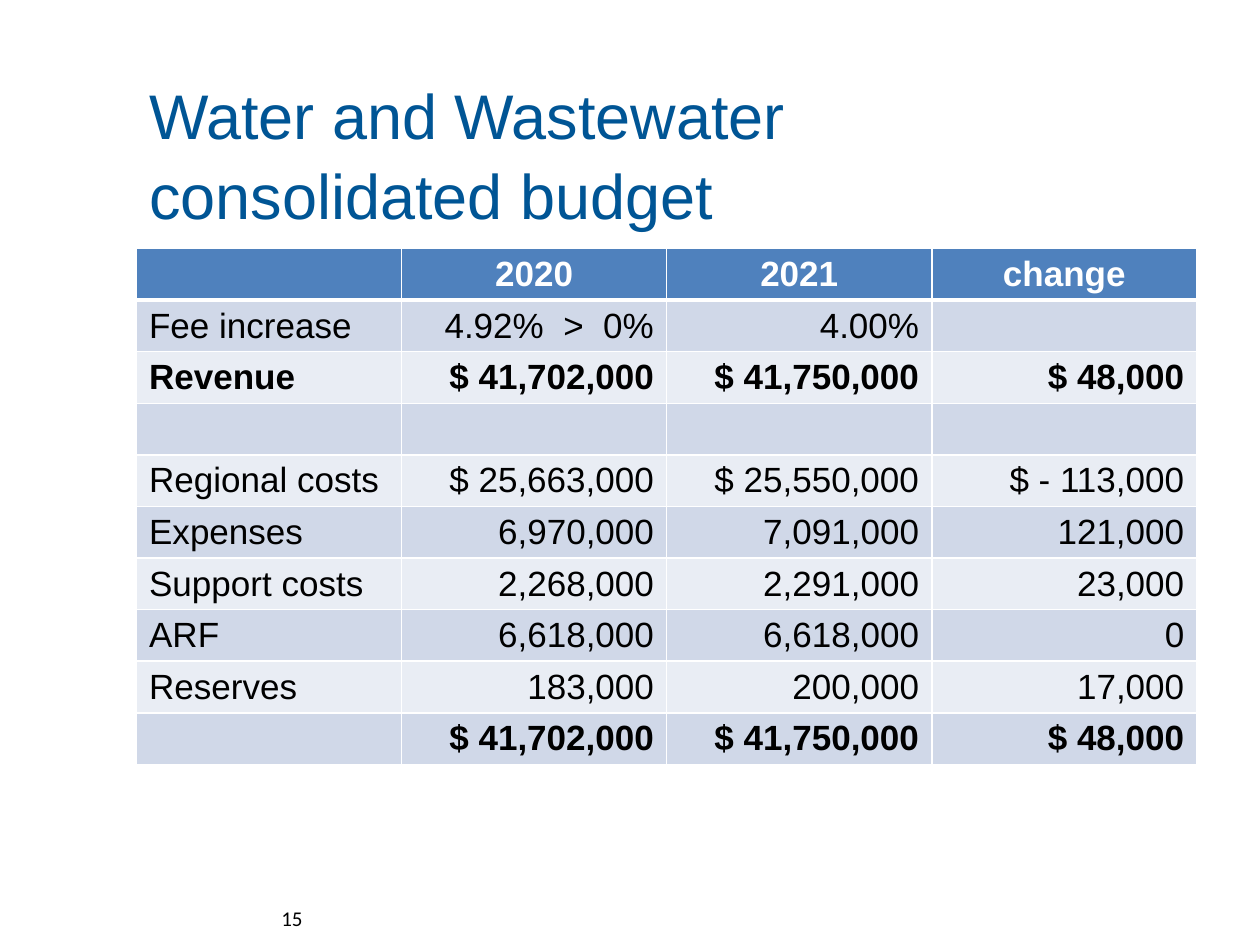
from lxml import etree
from pptx import Presentation
from pptx.dml.color import RGBColor
from pptx.enum.text import MSO_ANCHOR, MSO_AUTO_SIZE, PP_ALIGN
from pptx.oxml.ns import qn
from pptx.util import Pt

LEFT, CENTER, RIGHT = PP_ALIGN.LEFT, PP_ALIGN.CENTER, PP_ALIGN.RIGHT
MIDDLE = MSO_ANCHOR.MIDDLE
NO_AUTOFIT = MSO_AUTO_SIZE.NONE

TITLE = "Water and Wastewater \vconsolidated budget"
HEADINGS = ["", "2020", "2021", "change"]
BUDGET = [
    ["Fee increase", "4.92%  >  0%", "4.00%", ""],
    ["Revenue", "$ 41,702,000", "$ 41,750,000", "$ 48,000"],
    ["", "", "", ""],
    ["Regional costs", "$ 25,663,000", "$ 25,550,000", "$ - 113,000"],
    ["Expenses", "6,970,000", "7,091,000", "121,000"],
    ["Support costs", "2,268,000", "2,291,000", "23,000"],
    ["ARF", "6,618,000", "6,618,000", "0"],
    ["Reserves", "183,000", "200,000", "17,000"],
    ["", "$ 41,702,000", "$ 41,750,000", "$ 48,000"],
]
TOTAL_ROWS = (2, 9)
BANDS = ("E9EDF4", "D0D8E8")
HEADER_FILL = "4F81BD"
WHITE = "FFFFFF"
BLACK = "000000"


def rgb(value):
    return RGBColor.from_string(value)


def apply_format(target, values):
    for name, value in values.items():
        setattr(target, name, value)


def write(frame, text, align, color, **font_values):
    frame.text = text
    paragraph = frame.paragraphs[0]
    paragraph.alignment = align
    for run in paragraph.runs:
        apply_format(run.font, font_values)
        run.font.color.rgb = rgb(color)


def add_borders(cell, bottom_width, top_width):
    properties = cell._tc.get_or_add_tcPr()
    widths = {"lnL": 1, "lnR": 1, "lnT": top_width, "lnB": bottom_width}
    for side, width in widths.items():
        line = etree.SubElement(properties, qn(f"a:{side}"), w=str(Pt(width)))
        fill = etree.SubElement(line, qn("a:solidFill"))
        etree.SubElement(fill, qn("a:srgbClr"), val=WHITE)


def place_title(slide, left, top, width, height):
    title = slide.shapes.title
    apply_format(title, {"left": left, "top": top, "width": width, "height": height})
    frame = title.text_frame
    write(frame, TITLE, LEFT, "005595", size=Pt(36), name="Arial")
    apply_format(frame, {"vertical_anchor": MIDDLE, "word_wrap": True,
                         "auto_size": NO_AUTOFIT})
    frame.paragraphs[0].line_spacing = 1.05


def place_budget(slide, left, top, width, height):
    rows = [HEADINGS] + BUDGET
    budget = slide.shapes.add_table(
        len(rows), len(HEADINGS), left, top, width, height).table
    budget.horz_banding = False
    for row_index, values in enumerate(rows):
        is_header = row_index == 0
        for column_index, text in enumerate(values):
            cell = budget.cell(row_index, column_index)
            add_borders(cell, 3 if is_header else 1, 3 if row_index == 1 else 1)
            cell.fill.solid()
            cell.fill.fore_color.rgb = rgb(
                HEADER_FILL if is_header else BANDS[row_index % 2])
            apply_format(cell, {"vertical_anchor": MIDDLE,
                                "margin_top": 0, "margin_bottom": 0})
            align = CENTER if is_header else RIGHT if column_index else LEFT
            write(cell.text_frame, text, align, WHITE if is_header else BLACK,
                  size=Pt(20), name="Arial",
                  bold=is_header or row_index in TOTAL_ROWS)


def place_page_number(slide, left, top, width, height):
    frame = slide.shapes.add_textbox(left, top, width, height).text_frame
    apply_format(frame, {"vertical_anchor": MIDDLE, "word_wrap": True})
    write(frame, "15", RIGHT, BLACK, size=Pt(12), name="Calibri")


def main():
    deck = Presentation()
    apply_format(deck, {"slide_width": Pt(720), "slide_height": Pt(540)})
    slide = deck.slides.add_slide(deck.slide_layouts[5])
    margin = Pt(78)
    place_title(slide, margin, Pt(42), Pt(648), Pt(90))
    place_budget(slide, margin, Pt(142), Pt(606), Pt(295))
    place_page_number(slide, margin, Pt(510), Pt(102), Pt(29))
    deck.save("out.pptx")


if __name__ == "__main__":
    main()
